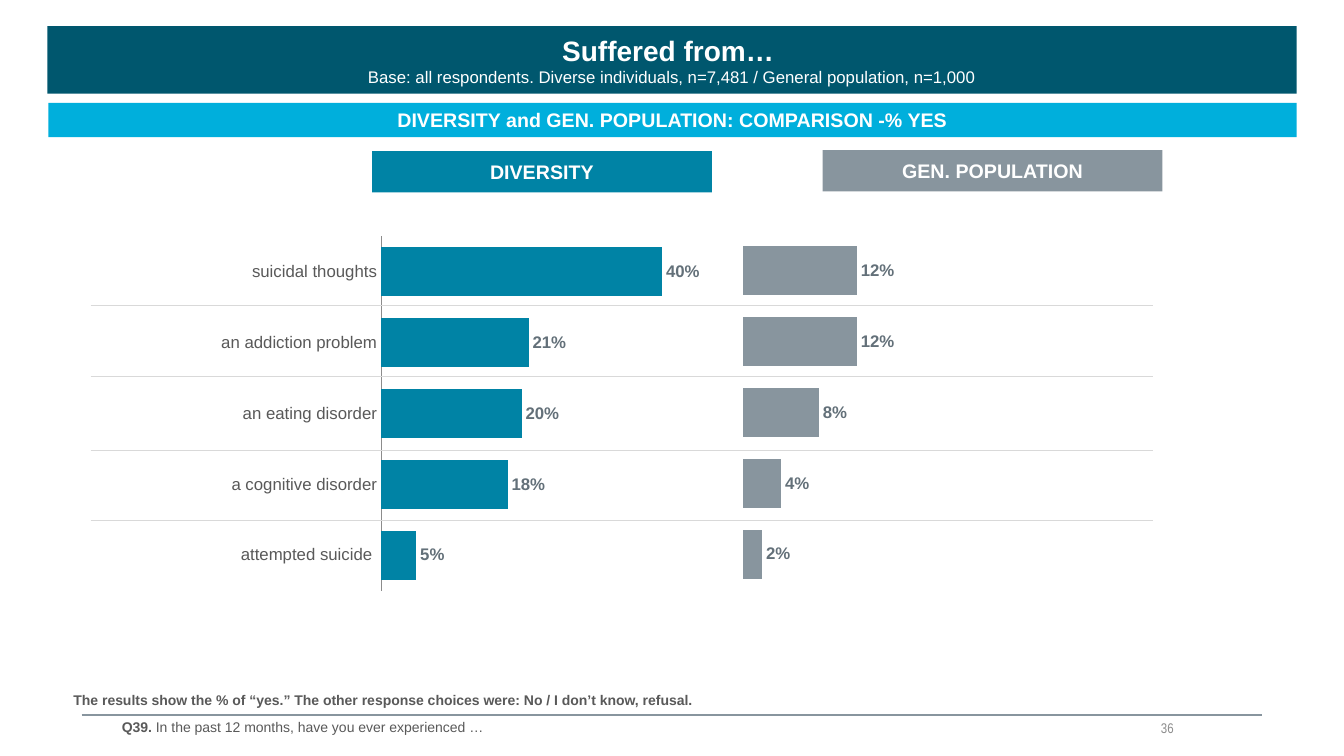
from typing import NamedTuple

from lxml.etree import SubElement
from pptx import Presentation
from pptx.chart.data import CategoryChartData
from pptx.dml.color import RGBColor
from pptx.enum.chart import XL_CHART_TYPE, XL_LABEL_POSITION, XL_TICK_LABEL_POSITION, XL_TICK_MARK
from pptx.enum.shapes import MSO_CONNECTOR, MSO_SHAPE
from pptx.enum.text import MSO_ANCHOR, PP_ALIGN
from pptx.oxml import parse_xml
from pptx.oxml.ns import nsdecls, qn
from pptx.util import Inches, Pt


class Theme:
    """Colours, fonts and type sizes of the slide."""
    navy = RGBColor.from_string("00576E")
    cyan = RGBColor.from_string("00AFDC")
    teal = RGBColor.from_string("0083A5")
    gray = RGBColor.from_string("88959E")
    slate = RGBColor.from_string("637079")
    ink = RGBColor.from_string("595959")
    pale = RGBColor.from_string("D9D9D9")
    mute = RGBColor.from_string("8C8C8C")
    white = RGBColor.from_string("FFFFFF")
    black = RGBColor.from_string("000000")
    sans, slim, base = "Arial", "Arial Narrow", "Calibri"
    title, head, body, note, chart = 20, 14, 12, 10, 18


class Box(NamedTuple):
    """A place on the slide, in inches."""
    x: float
    y: float
    w: float
    h: float

    def emu(self):
        """Give the four lengths for a new shape."""
        return [Inches(side) for side in self]


def style(font, size, color, bold=False, name=Theme.sans):
    """Set the look of one font."""
    font.size, font.bold, font.name = Pt(size), bold, name
    font.color.rgb = color


def tight(frame):
    """Remove the inner margins of a text frame."""
    frame.margin_left = frame.margin_right = 0
    frame.margin_top = frame.margin_bottom = 0


def banner(slide, box, fill, text, size=Theme.head):
    """Draw a filled bar with a centred bold line and return its frame."""
    bar = slide.shapes.add_shape(MSO_SHAPE.RECTANGLE, *box.emu())
    bar.shadow.inherit = False
    bar.fill.solid()
    bar.fill.fore_color.rgb = fill
    bar.line.fill.background()
    frame = bar.text_frame
    frame.word_wrap, frame.vertical_anchor = True, MSO_ANCHOR.MIDDLE
    frame.text = text
    line = frame.paragraphs[0]
    line.alignment = PP_ALIGN.CENTER
    style(line.runs[0].font, size, Theme.white, True)
    return frame


def label(slide, box, parts, color=Theme.ink, name=Theme.sans):
    """Place one line of note text from (text, bold) parts and return its frame."""
    frame = slide.shapes.add_textbox(*box.emu()).text_frame
    frame.word_wrap = True
    for text, bold in parts:
        run = frame.paragraphs[0].add_run()
        run.text = text
        style(run.font, Theme.note, color, bold, name)
    return frame


def rule(slide, x, y, width, color, weight):
    """Draw a level line."""
    line = slide.shapes.add_connector(
        MSO_CONNECTOR.STRAIGHT, Inches(x), Inches(y), Inches(x + width), Inches(y))
    line.line.color.rgb, line.line.width = color, Pt(weight)
    SubElement(line._element.spPr, qn("a:effectLst"))


def header(slide, box):
    """Place the title bar and the topic bar below it."""
    top = box._replace(h=0.67)
    frame = banner(slide, top, Theme.navy, "Suffered from… ", Theme.title)
    tight(frame)
    base = frame.add_paragraph()
    base.text = "Base: all respondents. Diverse individuals, n=7,481 / General population, n=1,000"
    base.alignment = PP_ALIGN.CENTER
    style(base.runs[0].font, Theme.body, Theme.white)
    banner(slide, Box(box.x + 0.01, box.y + 0.76, box.w - 0.01, 0.34), Theme.cyan,
           "DIVERSITY and GEN. POPULATION: COMPARISON -% YES")


def bars(slide, box, names, values, color, peak, left, width, named):
    """Place a bar chart whose plot starts at a share of the box width."""
    data = CategoryChartData(number_format="0%")
    data.categories = names
    data.add_series("Series 1", values)
    chart = slide.shapes.add_chart(XL_CHART_TYPE.BAR_CLUSTERED, *box.emu(), data).chart
    chart.has_legend = chart.has_title = False
    style(chart.font, Theme.chart, Theme.black, name=Theme.base)

    scale = chart.value_axis
    scale.minimum_scale, scale.maximum_scale = 0, peak
    scale.has_major_gridlines = scale.visible = False
    axis = chart.category_axis
    axis.reverse_order, axis.visible = True, named
    axis.major_tick_mark = XL_TICK_MARK.NONE
    axis.tick_label_position = XL_TICK_LABEL_POSITION.NEXT_TO_AXIS
    if named:
        axis.format.line.color.rgb, axis.format.line.width = Theme.mute, Pt(0.75)
        style(axis.tick_labels.font, Theme.body, Theme.ink)

    plot = chart.plots[0]
    plot.gap_width, plot.vary_by_categories = 45, False
    fill = plot.series[0].format.fill
    fill.solid()
    fill.fore_color.rgb = color
    plot.has_data_labels = True
    tags = plot.data_labels
    tags.show_value, tags.position = True, XL_LABEL_POSITION.OUTSIDE_END
    tags.number_format, tags.number_format_is_linked = "0%", False
    style(tags.font, Theme.body, Theme.slate, True)

    area = chart._chartSpace.chart.plotArea
    for old in area.findall(qn("c:layout")):
        area.remove(old)
    sides = {"x": left, "y": 0.036, "w": width, "h": 0.927}
    modes = '<c:xMode val="edge"/><c:yMode val="edge"/>'
    spans = "".join(f'<c:{key} val="{val}"/>' for key, val in sides.items())
    area.insert(0, parse_xml(
        f'<c:layout {nsdecls("c")}><c:manualLayout><c:layoutTarget val="inner"/>'
        f"{modes}{spans}</c:manualLayout></c:layout>"))


def panel(slide, box):
    """Place both headed charts and the lines between their rows."""
    names = ["suicidal thoughts", "an addiction problem", "an eating disorder",
             "a cognitive disorder", "attempted suicide "]
    banner(slide, Box(box.x + 2.79, box.y + 0.01, 3.37, 0.41), Theme.teal, "DIVERSITY")
    banner(slide, Box(box.x + 7.26, box.y, 3.37, 0.41), Theme.gray, "GEN. POPULATION")
    bars(slide, Box(box.x - 1.65, box.y + 0.72, 8.12, 3.79), names,
         [0.4, 0.21, 0.2, 0.18, 0.05], Theme.teal, 0.45, 0.558, 0.386, True)
    for drop in (1.54, 2.25, 2.98, 3.67):
        rule(slide, box.x, box.y + drop, box.w, Theme.pale, 0.75)
    bars(slide, Box(box.x + 3.5, box.y + 0.71, 8.12, 3.79), list("12345"),
         [0.12, 0.12, 0.08, 0.04, 0.02], Theme.gray, 0.5, 0.366, 0.578, False)


def footer(slide, box):
    """Place the note, the line, the question and the page number."""
    rule(slide, box.x + 0.18, box.y + 0.28, 11.71, Theme.gray, 1.5)
    label(slide, Box(box.x, box.y, 11.24, 0.27), [
        ("The results show the % of “yes.” The other response choices were: "
         "No / I don’t know, refusal.", True)])
    label(slide, Box(box.x + 0.48, box.y + 0.27, 11.24, 0.27), [
        ("Q39. ", True), ("In the past 12 months, have you ever experienced …", False)])
    page = label(slide, Box(box.x + 8.1, box.y + 0.28, 2.91, 0.26), [("36", False)],
                 Theme.mute, Theme.slim)
    tight(page)
    page.vertical_anchor = MSO_ANCHOR.MIDDLE
    page.paragraphs[0].alignment = PP_ALIGN.RIGHT


def main():
    """Build and save the slide."""
    deck = Presentation()
    deck.slide_width, deck.slide_height = Inches(13.33), Inches(7.5)
    slide = deck.slides.add_slide(deck.slide_layouts[6])
    header(slide, Box(0.47, 0.26, 12.39, 1.1))
    panel(slide, Box(0.9, 1.49, 10.54, 4.51))
    footer(slide, Box(0.63, 6.81, 11.89, 0.54))
    deck.save("out.pptx")


if __name__ == "__main__":
    main()
